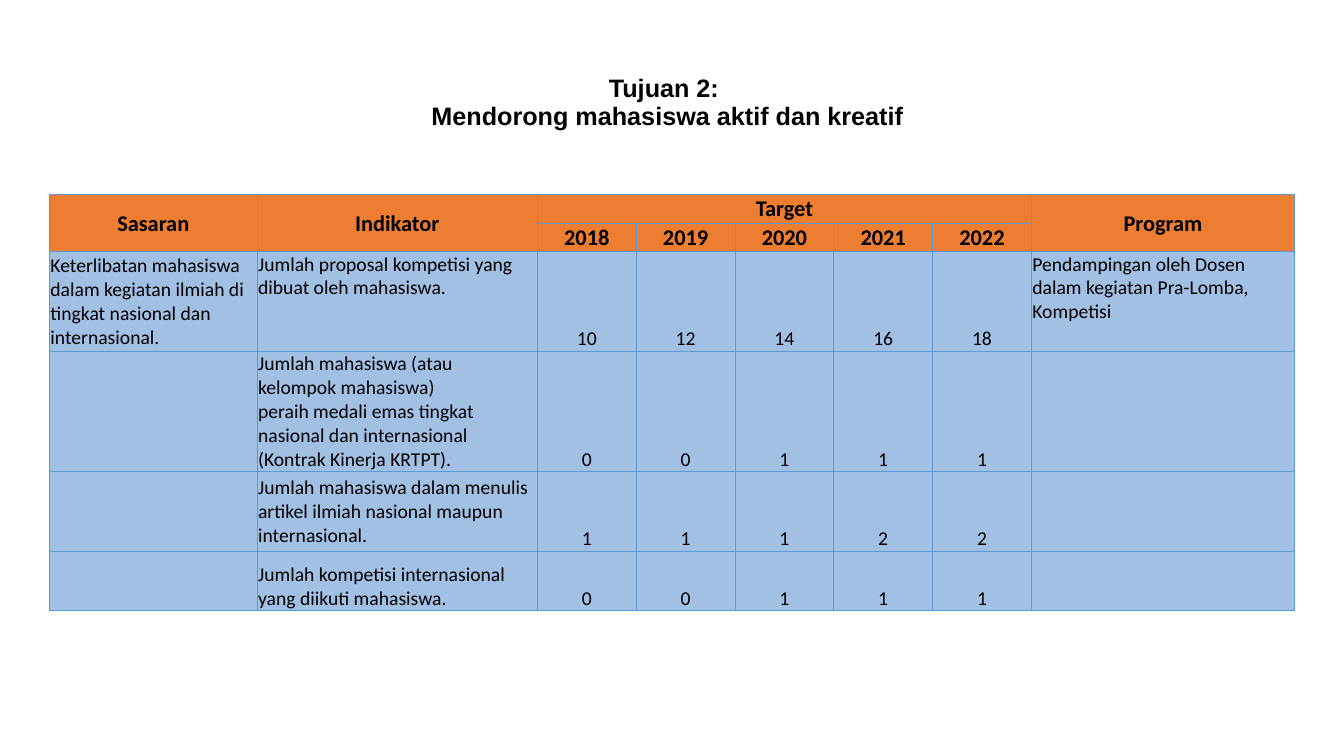
from pptx import Presentation
from pptx.dml.color import RGBColor
from pptx.enum.text import MSO_ANCHOR, MSO_AUTO_SIZE, PP_ALIGN
from pptx.oxml import parse_xml
from pptx.oxml.ns import nsdecls
from pptx.util import Inches, Pt

ORANGE, BLUE, BORDER, BLACK = "ED7D31", "A2BFE4", "5B9BD5", "000000"
TOP, MIDDLE, BOTTOM = MSO_ANCHOR.TOP, MSO_ANCHOR.MIDDLE, MSO_ANCHOR.BOTTOM
COLUMN_WIDTHS = [2.06, 2.78] + [0.98] * 5 + [2.61]
ROW_HEIGHTS = [0.28, 0.28, 0.99, 1.19, 0.79, 0.59]
HEADER_ROWS = 2
YEAR_COLUMNS = range(2, 7)

ROWS = [
    ["Sasaran", "Indikator", "Target", "", "", "", "", "Program"],
    ["", "", "2018", "2019", "2020", "2021", "2022", ""],
    ["Keterlibatan mahasiswa dalam kegiatan ilmiah di tingkat nasional dan internasional.",
     "Jumlah proposal kompetisi yang dibuat oleh mahasiswa.",
     "10", "12", "14", "16", "18",
     "Pendampingan oleh Dosen dalam kegiatan Pra-Lomba, Kompetisi"],
    ["", "Jumlah mahasiswa (atau\nkelompok mahasiswa)\nperaih medali emas tingkat\n"
         "nasional dan internasional\n(Kontrak Kinerja KRTPT).",
     "0", "0", "1", "1", "1", ""],
    ["", "Jumlah mahasiswa dalam menulis artikel ilmiah nasional maupun internasional.",
     "1", "1", "1", "2", "2", ""],
    ["", "Jumlah kompetisi internasional yang diikuti mahasiswa.",
     "0", "0", "1", "1", "1", ""],
]
INDICATOR_ANCHORS = [MIDDLE, MIDDLE, TOP, MIDDLE, MIDDLE, BOTTOM]


def write(paragraph, content, color, **font_format):
    paragraph.text = content
    paragraph.font.color.rgb = RGBColor.from_string(color)
    for name, value in font_format.items():
        setattr(paragraph.font, name, value)


def add_borders(cell, color, width):
    properties = cell._tc.get_or_add_tcPr()
    for side in "LRTB":
        properties.append(parse_xml(
            f'<a:ln{side} {nsdecls("a")} w="{Pt(width)}"><a:solidFill>'
            f'<a:srgbClr val="{color}"/></a:solidFill></a:ln{side}>'))


presentation = Presentation()
presentation.slide_width, presentation.slide_height = Inches(13.33), Inches(7.5)
slide = presentation.slides.add_slide(presentation.slide_layouts[5])

title = slide.shapes.title
title.left, title.top, title.width, title.height = map(Inches, (0.87, 0.82, 11.5, 0.41))
title.text_frame.auto_size = MSO_AUTO_SIZE.NONE
title.text_frame.vertical_anchor = MIDDLE
heading = title.text_frame.paragraphs[0]
write(heading, "Tujuan 2: \nMendorong mahasiswa aktif dan kreatif", BLACK,
      name="Arial", size=Pt(18), bold=True)
heading.alignment = PP_ALIGN.CENTER
heading.line_spacing = 0.9

table = slide.shapes.add_table(
    len(ROWS), len(COLUMN_WIDTHS), Inches(0.49), Inches(1.93),
    Inches(sum(COLUMN_WIDTHS)), Inches(sum(ROW_HEIGHTS))).table
for column, width in zip(table.columns, COLUMN_WIDTHS):
    column.width = Inches(width)
for row, height in zip(table.rows, ROW_HEIGHTS):
    row.height = Inches(height)

for row_index, row_values in enumerate(ROWS):
    is_header = row_index < HEADER_ROWS
    for column_index, value in enumerate(row_values):
        cell = table.cell(row_index, column_index)
        add_borders(cell, BORDER, 0.5)
        cell.fill.solid()
        cell.fill.fore_color.rgb = RGBColor.from_string(ORANGE if is_header else BLUE)
        cell.margin_left = cell.margin_right = cell.margin_top = Inches(0.01)
        cell.margin_bottom = 0

        is_year = column_index in YEAR_COLUMNS
        if is_year:
            cell.vertical_anchor = BOTTOM
        elif column_index == 1:
            cell.vertical_anchor = INDICATOR_ANCHORS[row_index]
        else:
            cell.vertical_anchor = MIDDLE if is_header or column_index == 0 else TOP

        paragraph = cell.text_frame.paragraphs[0]
        write(paragraph, value, BLACK, name="Calibri",
              size=Pt(16 if is_header else 14), bold=is_header)
        paragraph.alignment = PP_ALIGN.CENTER if is_header or is_year else PP_ALIGN.LEFT

for column_index in (0, 1, 7):
    table.cell(0, column_index).merge(table.cell(1, column_index))
table.cell(0, YEAR_COLUMNS[0]).merge(table.cell(0, YEAR_COLUMNS[-1]))

presentation.save("out.pptx")
